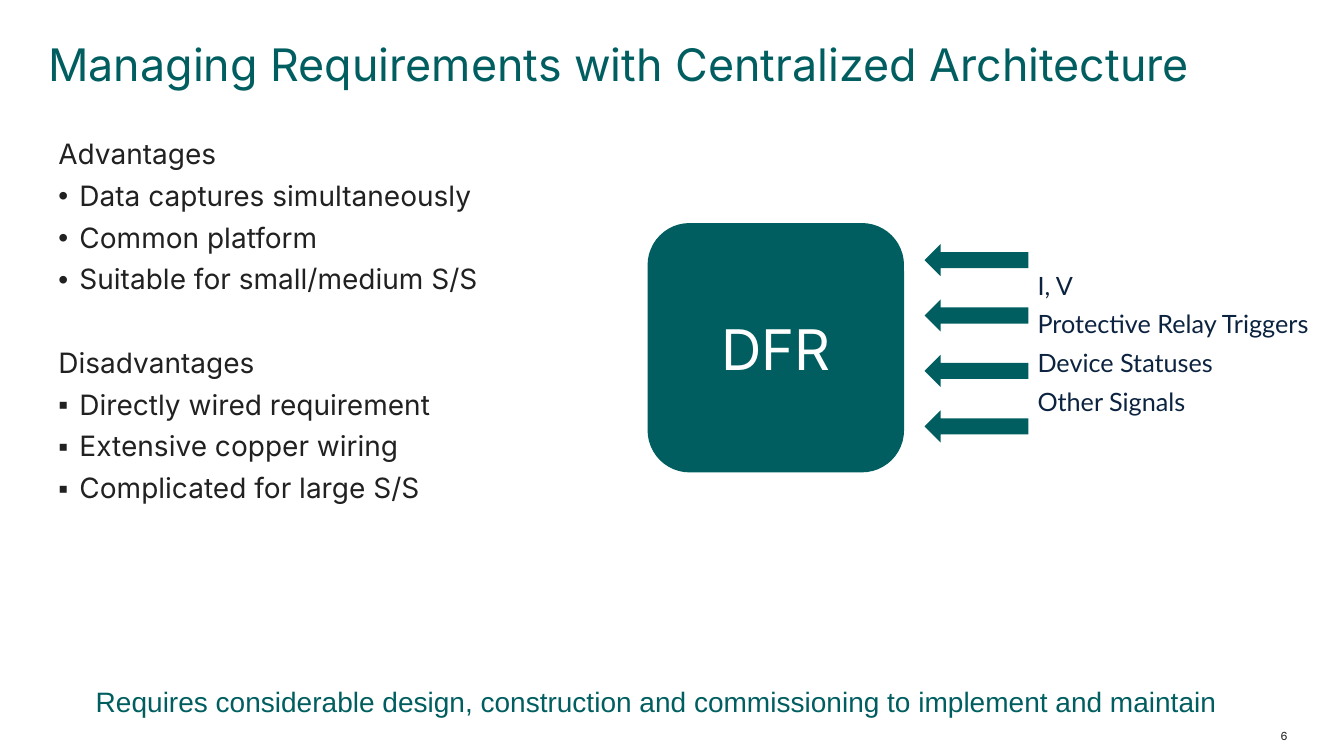
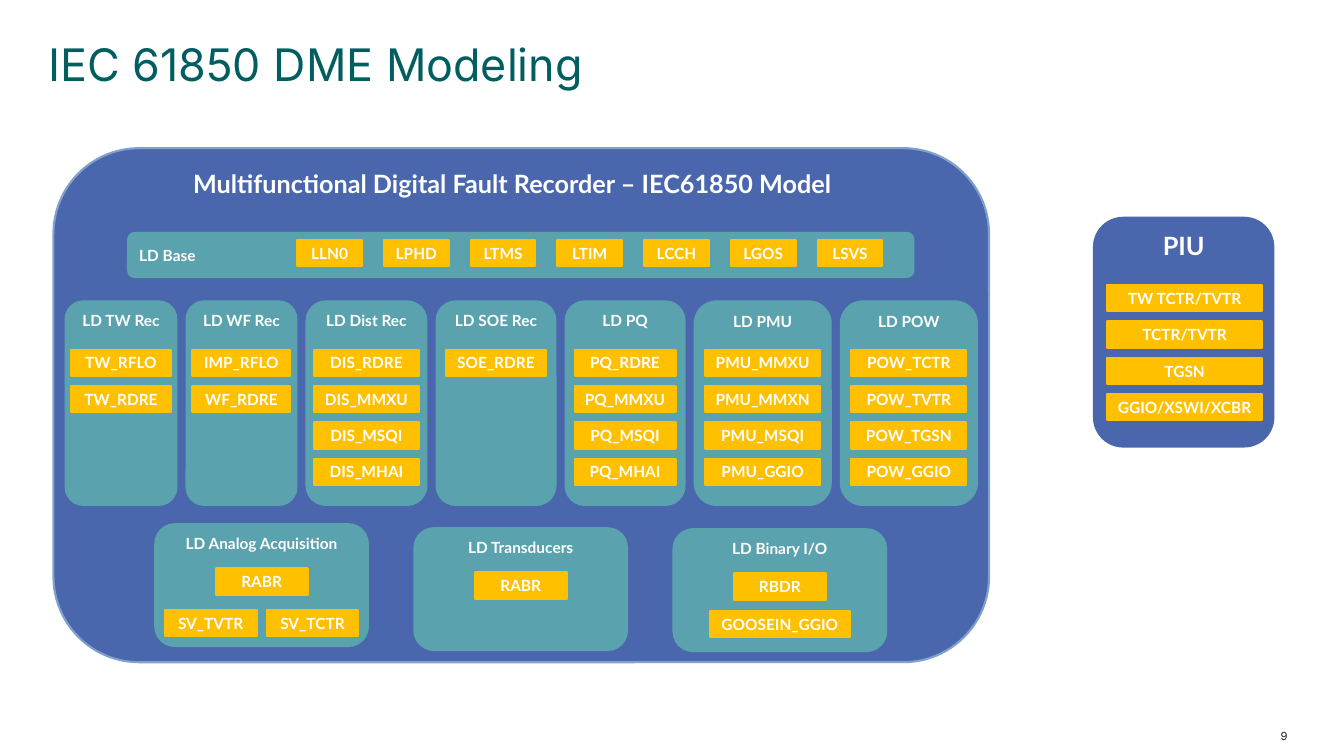
import pptx
import pptx.dml.color
import pptx.enum.shapes
import pptx.enum.text
import pptx.oxml.ns
import pptx.util
from dataclasses import dataclass
from lxml import etree

Inches, Pt = pptx.util.Inches, pptx.util.Pt
SHAPE = pptx.enum.shapes.MSO_SHAPE
ALIGN = pptx.enum.text.PP_ALIGN
ANCHOR = pptx.enum.text.MSO_ANCHOR


@dataclass(frozen=True)
class Theme:
    teal: str = "005E60"
    ink: str = "212121"
    navy: str = "0C2340"
    white: str = "FFFFFF"
    device: str = "4A67AD"
    device_edge: str = "82A0CC"
    panel: str = "5AA2AE"
    chip: str = "FFC000"
    sans: str = "Inter"
    label: str = "Lato"
    plain: str = "Arial"
    title_size: int = 32
    block_size: int = 40
    body_size: int = 20
    head_size: int = 18
    label_size: int = 11
    number_size: int = 8


T = Theme()

# Centralized architecture
PROS_CONS = [
    ("Advantages", "•", ["Data captures simultaneously", "Common platform",
                         "Suitable for small/medium S/S"]),
    ("Disadvantages", "▪", ["Directly wired requirement", "Extensive copper wiring",
                            "Complicated for large S/S"]),
]
SIGNALS = ["I, V", "Protective Relay Triggers", "Device Statuses", "Other Signals"]
CONCLUSION = ("Requires considerable design, construction and commissioning "
              "to implement and maintain")

# Device model: logical devices and their logical nodes
BASE_NODES = ["LLN0", "LPHD", "LTMS", "LTIM", "LCCH", "LGOS", "LSVS"]
RECORDERS = [  # name, panel width, node width, nodes
    ("LD TW Rec", 1.12, 0.99, ["TW_RFLO", "TW_RDRE"]),
    ("LD WF Rec", 1.11, 0.97, ["IMP_RFLO", "WF_RDRE"]),
    ("LD Dist Rec", 1.21, 1.05, ["DIS_RDRE", "DIS_MMXU", "DIS_MSQI", "DIS_MHAI"]),
    ("LD SOE Rec", 1.2, 1, ["SOE_RDRE"]),
    ("LD PQ", 1.2, 1, ["PQ_RDRE", "PQ_MMXU", "PQ_MSQI", "PQ_MHAI"]),
    ("LD PMU", 1.37, 1.14, ["PMU_MMXU", "PMU_MMXN", "PMU_MSQI", "PMU_GGIO"]),
    ("LD POW", 1.37, 1.14, ["POW_TCTR", "POW_TVTR", "POW_TGSN", "POW_GGIO"]),
]
INPUTS = [  # name, top, rows of (offset from top, node width, nodes)
    ("LD Analog Acquisition", 5.19, [(0.45, 0.91, ["RABR"]),
                                     (0.86, 0.91, ["SV_TVTR", "SV_TCTR"])]),
    ("LD Transducers", 5.23, [(0.45, 0.91, ["RABR"])]),
    ("LD Binary I/O", 5.24, [(0.45, 0.91, ["RBDR"]), (0.82, 1.39, ["GOOSEIN_GGIO"])]),
]
PIU_NODES = ["TW TCTR/TVTR", "TCTR/TVTR", "TGSN", "GGIO/XSWI/XCBR"]
NODE_HEIGHT, NODE_PITCH = 0.26, 0.36


def rgb(color):
    return pptx.dml.color.RGBColor.from_string(color)


def write(p, text, size, font, color, bold=False, align=ALIGN.LEFT):
    p.alignment = align
    r = p.add_run()
    r.text = text
    r.font.size, r.font.name, r.font.bold = Pt(size), font, bold
    r.font.color.rgb = rgb(color)


def setup_frame(tf, anchor, insets):
    """Wrap the text, and set its anchor and its side and top/bottom insets."""
    tf.word_wrap = True
    tf.vertical_anchor = anchor
    tf.margin_left = tf.margin_right = Inches(insets[0])
    tf.margin_top = tf.margin_bottom = Inches(insets[1])


def add_text(shapes, box, anchor=ANCHOR.TOP, insets=(0, 0)):
    tf = shapes.add_textbox(*map(Inches, box)).text_frame
    setup_frame(tf, anchor, insets)
    return tf


def paragraphs(tf, count):
    return [tf.paragraphs[0]] + [tf.add_paragraph() for _ in range(count - 1)]


def add_box(shapes, kind, box, fill, line=None, weight=1.5):
    sp = shapes.add_shape(kind, *map(Inches, box))
    sp.shadow.inherit = False
    sp.fill.solid()
    sp.fill.fore_color.rgb = rgb(fill)
    if line:
        sp.line.color.rgb = rgb(line)
        sp.line.width = Pt(weight)
    else:
        sp.line.fill.background()
    return sp


def add_panel(shapes, box, name, fill=T.panel, size=T.label_size):
    """Rounded panel with its name at the top."""
    tf = add_box(shapes, SHAPE.ROUNDED_RECTANGLE, box, fill).text_frame
    setup_frame(tf, ANCHOR.TOP, (0, 0.05))
    write(tf.paragraphs[0], name, size, T.label, T.white, True, ALIGN.CENTER)
    return tf


def add_node(shapes, left, top, width, name):
    sp = add_box(shapes, SHAPE.RECTANGLE, (left, top, width, NODE_HEIGHT), T.chip, T.chip)
    setup_frame(sp.text_frame, ANCHOR.MIDDLE, (0, 0))
    write(sp.text_frame.paragraphs[0], name, T.label_size, T.label, T.white, True,
          ALIGN.CENTER)


def add_node_column(shapes, left, top, width, names):
    for i, name in enumerate(names):
        add_node(shapes, left, top + i * NODE_PITCH, width, name)


def set_bullet(p, char, indent=0.21):
    pPr = p._p.get_or_add_pPr()
    pPr.set("marL", str(Inches(indent)))
    pPr.set("indent", str(-Inches(indent)))
    qn = pptx.oxml.ns.qn
    etree.SubElement(pPr, qn("a:buFont"), typeface=T.plain)
    etree.SubElement(pPr, qn("a:buChar"), char=char)


def new_slide(prs, title, number):
    s = prs.slides.add_slide(prs.slide_layouts[6])
    p = add_text(s.shapes, (0.48, -0.09, 12.29, 1), ANCHOR.BOTTOM).paragraphs[0]
    p.line_spacing = 0.9
    write(p, title, T.title_size, T.sans, T.teal)
    tf = add_text(s.shapes, (12.27, 7.1, 0.6, 0.4), ANCHOR.MIDDLE, (0.1, 0.05))
    write(tf.paragraphs[0], str(number), T.number_size, T.sans, T.ink, align=ALIGN.RIGHT)
    return s


def add_pros_cons(shapes):
    tf = add_text(shapes, (0.48, 1.32, 4.83, 4.87), insets=(0.1, 0.05))
    lines = []
    for heading, bullet, points in PROS_CONS:
        lines += [(heading, None)] + [(point, bullet) for point in points]
    for i, (p, (text, bullet)) in enumerate(zip(paragraphs(tf, len(lines)), lines)):
        p.line_spacing = 0.99
        if i and not bullet:
            p.space_before = Pt(30)
        p.space_after = Pt(6)
        if bullet:
            set_bullet(p, bullet)
        write(p, text, T.body_size, T.sans, T.ink)


def build_architecture(prs):
    s = new_slide(prs, "Managing Requirements with Centralized Architecture", 6)
    add_pros_cons(s.shapes)

    recorder = add_box(s.shapes, SHAPE.ROUNDED_RECTANGLE, (6.43, 2.22, 2.53, 2.46),
                       T.teal, T.teal, 1)
    setup_frame(recorder.text_frame, ANCHOR.MIDDLE, (0.1, 0.05))
    write(recorder.text_frame.paragraphs[0], "DFR", T.block_size, T.sans, T.white,
          align=ALIGN.CENTER)

    arrows = s.shapes.add_group_shape().shapes
    for i in range(len(SIGNALS)):
        add_box(arrows, SHAPE.LEFT_ARROW, (9.17, 2.42 + i * 0.55, 1.03, 0.32), T.teal)
    tf = add_text(s.shapes, (10.29, 2.55, 2.72, 1.71), ANCHOR.MIDDLE)
    for p, signal in zip(paragraphs(tf, len(SIGNALS)), SIGNALS):
        p.space_after = Pt(6)
        write(p, signal, T.head_size, T.label, T.navy)

    p = add_text(s.shapes, (0.95, 6.68, 11.43, 0.45), ANCHOR.BOTTOM).paragraphs[0]
    p.line_spacing = 0.9
    write(p, CONCLUSION, T.body_size, T.plain, T.teal)


def add_recorder_model(shapes):
    add_box(shapes, SHAPE.ROUNDED_RECTANGLE, (0.53, 1.47, 9.28, 5.1), T.device,
            T.device_edge)
    tf = add_text(shapes, (1.28, 1.67, 7.6, 0.28))
    write(tf.paragraphs[0], "Multifunctional Digital Fault Recorder – IEC61850 Model",
          T.head_size, T.label, T.white, True, ALIGN.CENTER)

    base = add_panel(shapes, (1.26, 2.3, 7.81, 0.46), "LD Base")
    setup_frame(base, ANCHOR.MIDDLE, (0.1, 0.05))
    base.paragraphs[0].alignment = ALIGN.LEFT
    for i, name in enumerate(BASE_NODES):
        add_node(shapes, 2.95 + i * 0.86, 2.38, 0.64, name)

    left, gap = 0.64, 0.08
    for name, width, node_width, nodes in RECORDERS:
        add_panel(shapes, (left, 2.98, width, 2.04), name)
        add_node_column(shapes, left + (width - node_width) / 2, 3.47, node_width, nodes)
        left += width + gap

    width, gap = 2.13, 0.1
    for i, (name, top, rows) in enumerate(INPUTS):
        left = 1.53 + i * 2.57
        add_panel(shapes, (left, top, width, 1.23), name)
        for offset, node_width, nodes in rows:
            step = node_width + gap
            start = left + (width - len(nodes) * step + gap) / 2
            for j, node in enumerate(nodes):
                add_node(shapes, start + j * step, top + offset, node_width, node)


def build_model(prs):
    s = new_slide(prs, "IEC 61850 DME Modeling", 9)
    add_recorder_model(s.shapes.add_group_shape().shapes)
    piu = s.shapes.add_group_shape().shapes
    add_panel(piu, (10.84, 2.15, 1.8, 2.29), "PIU", T.device, T.head_size)
    add_node_column(piu, 10.98, 2.83, 1.54, PIU_NODES)


def main():
    prs = pptx.Presentation()
    prs.slide_width, prs.slide_height = Inches(13.33), Inches(7.5)
    build_architecture(prs)
    build_model(prs)
    prs.save("out.pptx")


if __name__ == "__main__":
    main()
